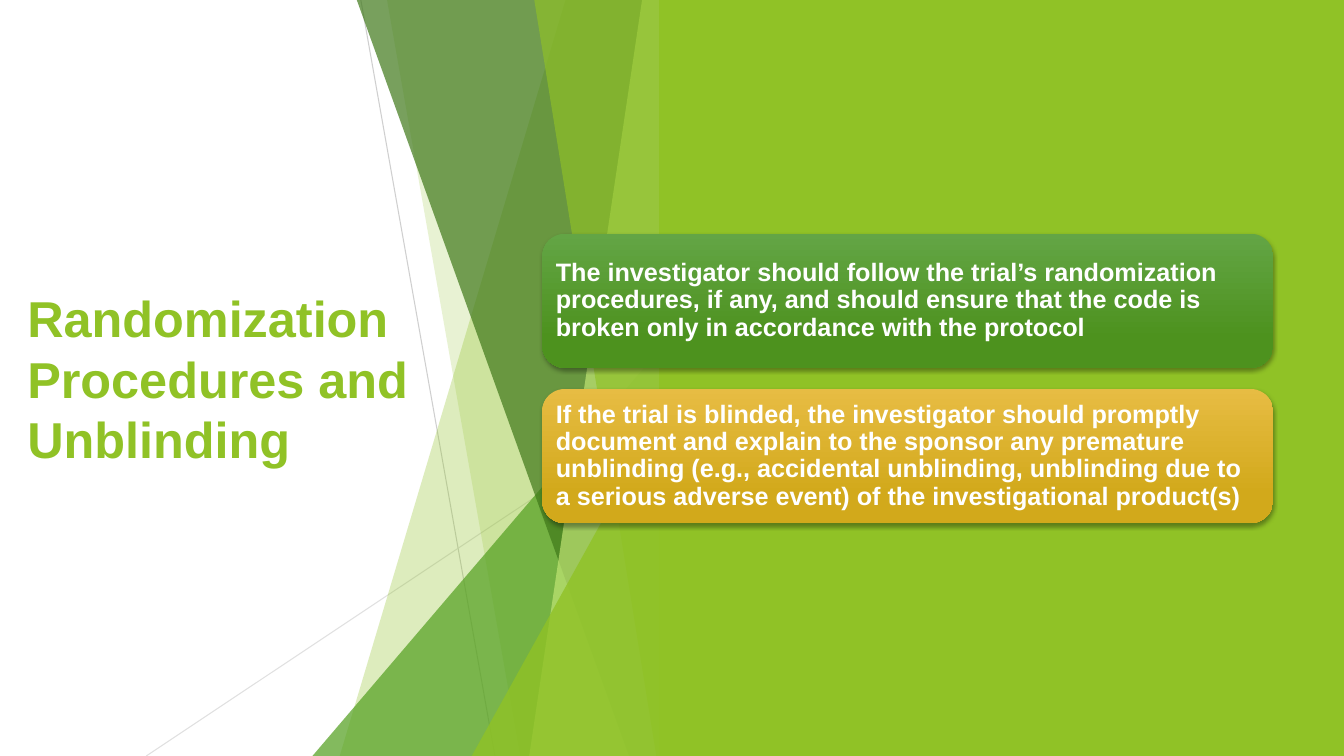
from lxml.etree import SubElement
from pptx import Presentation
from pptx.dml.color import RGBColor
from pptx.enum.dml import MSO_LINE
from pptx.enum.shapes import MSO_CONNECTOR, MSO_SHAPE
from pptx.enum.text import MSO_ANCHOR, MSO_AUTO_SIZE, PP_ALIGN
from pptx.oxml.ns import qn
from pptx.util import Inches, Pt

WHITE = RGBColor(0xFF, 0xFF, 0xFF)
BLACK = RGBColor(0x00, 0x00, 0x00)
GRAY = RGBColor(0xBF, 0xBF, 0xBF)
PALE = RGBColor(0xD9, 0xD9, 0xD9)
LIME = RGBColor(0x90, 0xC2, 0x26)
LEAF = RGBColor(0x54, 0xA0, 0x21)
PINE = RGBColor(0x3F, 0x78, 0x19)
MINT = RGBColor(0xC0, 0xE4, 0x74)
FERN = RGBColor(0x63, 0xA5, 0x45)
MOSS = RGBColor(0x4D, 0x92, 0x1E)
GOLD = RGBColor(0xE7, 0xBC, 0x43)
AMBER = RGBColor(0xD2, 0xA9, 0x1B)

deck = Presentation()
deck.slide_width, deck.slide_height = Inches(13.33), Inches(7.5)
slide = deck.slides.add_slide(deck.slide_layouts[5])
shapes = slide.shapes


def grid(*cells):
    sides = (deck.slide_width, deck.slide_height)
    return [round(sides[i % 2] * cell / 100) for i, cell in enumerate(cells)]


def fade(color, alpha):
    SubElement(color, qn("a:alpha")).set("val", str(alpha * 1000))


title = shapes.title
title.left, title.top, title.width, title.height = grid(1.28, 20.13, 33.15, 59.73)
frame = title.text_frame
frame.text = "Randomization Procedures and Unblinding"
frame.word_wrap = True
frame.auto_size = MSO_AUTO_SIZE.NONE
frame.vertical_anchor = MSO_ANCHOR.MIDDLE
para = frame.paragraphs[0]
para.alignment = PP_ALIGN.LEFT
para.font.name, para.font.size, para.font.bold = "Arial", Pt(36), True
para.font.color.rgb = LIME

EDGE = 49.96
rays = [
    ((26.85, 0, 36.83, 100), GRAY, 75),
    ((EDGE, 53.73, 10.88, 100), PALE, 80),
]
for ends, hue, alpha in rays:
    ray = shapes.add_connector(MSO_CONNECTOR.STRAIGHT, *grid(*ends))
    ray.line.width = Pt(0.75)
    ray.line.color.rgb = hue
    ray.line.dash_style = MSO_LINE.SOLID
    fade(ray.line.fill._xPr.find(".//" + qn("a:srgbClr")), alpha)
    SubElement(ray._element.spPr, qn("a:effectLst"))

facets = [
    (42.08, 25.28, 0, LIME, 30),
    (28.8, 38.7, 0, LIME, 20),
    (EDGE, 23.25, 44.4, LEAF, 72),
    (26.55, 46.8, 0, PINE, 70),
    (47.78, 39.38, 0, MINT, 70),
    (39.75, 48.83, 0, LIME, 65),
    (EDGE, 35.1, 52.4, LIME, 80),
]
for peak, foot, top, hue, alpha in facets:
    if peak == EDGE:
        box = grid(foot, top, EDGE - foot, 100 - top)
        facet = shapes.add_shape(MSO_SHAPE.ISOSCELES_TRIANGLE, *box)
        facet.adjustments[0] = 1
    else:
        pen = shapes.build_freeform(*grid(peak, top))
        pen.add_line_segments([grid(EDGE, top), grid(EDGE, 100), grid(foot, 100)])
        facet = pen.convert_to_shape()
    facet.shadow.inherit = False
    facet.line.fill.background()
    facet.fill.solid()
    facet.fill.fore_color.rgb = hue
    fade(facet._element.spPr.find(".//" + qn("a:srgbClr")), alpha)

panel = shapes.add_shape(MSO_SHAPE.RECTANGLE, *grid(49.05, 0, 50.95, 100))
panel.shadow.inherit = False
panel.line.fill.background()
panel.fill.solid()
panel.fill.fore_color.rgb = LIME

cards = [
    (
        "The investigator should follow the trial’s randomization procedures, if any, "
        "and should ensure that the code is broken only in accordance with the protocol",
        FERN, MOSS,
    ),
    (
        "If the trial is blinded, the investigator should promptly document and explain "
        "to the sponsor any premature unblinding (e.g., accidental unblinding, unblinding "
        "due to a serious adverse event) of the investigational product(s)",
        GOLD, AMBER,
    ),
]
for row, (text, light, dark) in enumerate(cards):
    box = grid(40.35, 30.93 + 20.53 * row, 54.38, 17.73)
    card = shapes.add_shape(MSO_SHAPE.ROUNDED_RECTANGLE, *box)
    card.line.fill.background()
    card.fill.gradient()
    card.fill.gradient_angle = 270
    for stop, hue, spot in zip(card.fill.gradient_stops, (light, dark), (0, 0.78)):
        stop.color.rgb, stop.position = hue, spot
    card.shadow.inherit = False
    glow = SubElement(card._element.spPr.find(qn("a:effectLst")), qn("a:outerShdw"))
    for key, size in (("blurRad", Pt(3)), ("dist", Pt(2)), ("dir", 90 * 60000)):
        glow.set(key, str(int(size)))
    glow.set("rotWithShape", "0")
    tint = SubElement(glow, qn("a:srgbClr"))
    tint.set("val", str(BLACK))
    fade(tint, 35)
    frame = card.text_frame
    frame.text = text
    frame.word_wrap = True
    frame.vertical_anchor = MSO_ANCHOR.MIDDLE
    frame.margin_left = frame.margin_right = Inches(0.07)
    frame.margin_top = frame.margin_bottom = Inches(0.07)
    para = frame.paragraphs[0]
    para.alignment = PP_ALIGN.LEFT
    para.line_spacing = 0.9
    para.font.name, para.font.size, para.font.bold = "Arial", Pt(18), True
    para.font.color.rgb = WHITE

deck.save("out.pptx")
